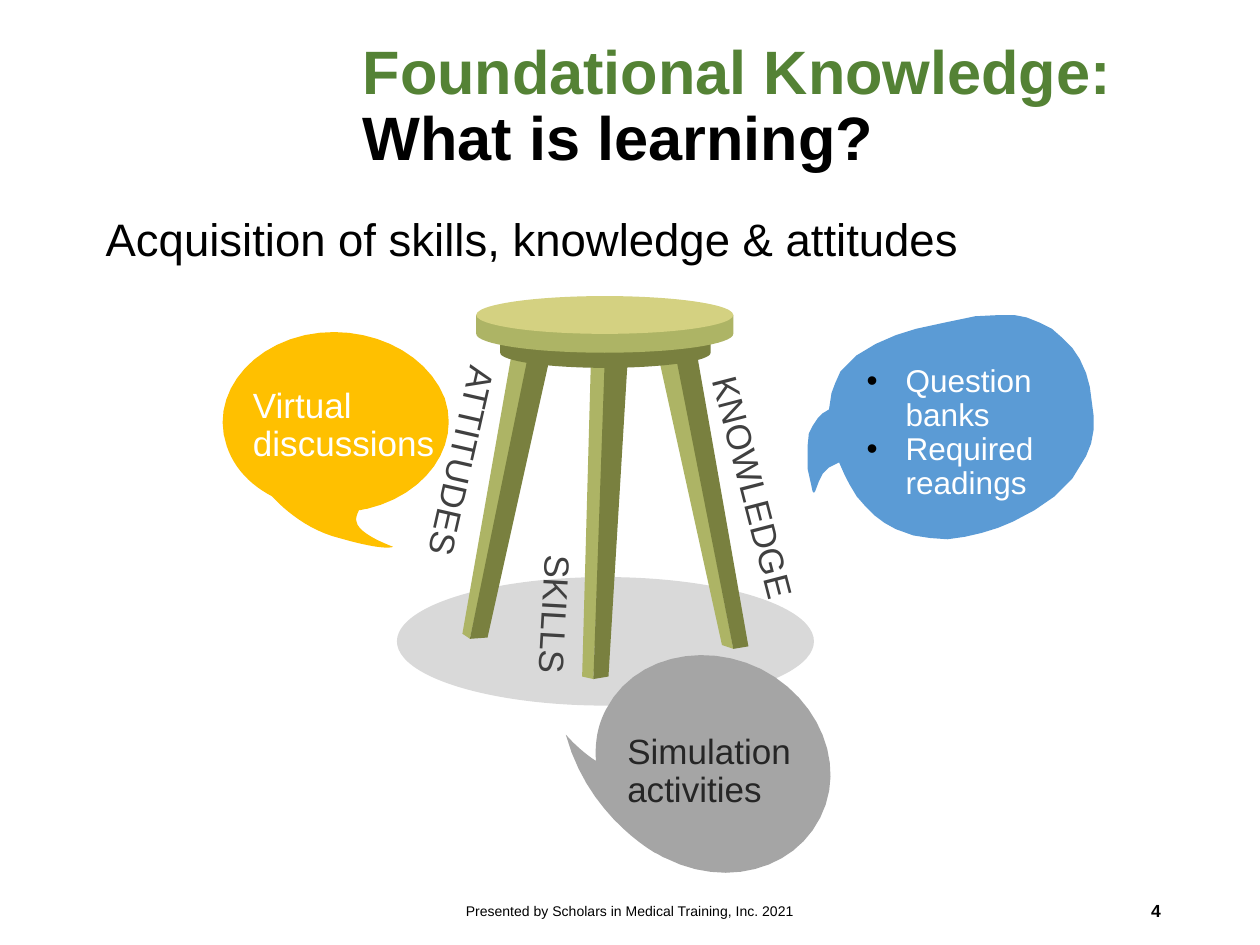
from math import cos, pi, sin

from lxml import etree
from pptx import Presentation
from pptx.dml.color import RGBColor
from pptx.enum.shapes import MSO_SHAPE
from pptx.enum.text import MSO_ANCHOR, PP_ALIGN
from pptx.oxml.ns import qn
from pptx.util import Inches, Pt

OVAL = MSO_SHAPE.OVAL
TOP, MIDDLE = MSO_ANCHOR.TOP, MSO_ANCHOR.MIDDLE
LEFT, CENTER, RIGHT = PP_ALIGN.LEFT, PP_ALIGN.CENTER, PP_ALIGN.RIGHT

COLUMNS = 100  # square cells: 100 columns by 75 rows
FONT = "Arial"
COLORS = {
    "black": "000000", "white": "FFFFFF", "heading": "548235",
    "label": "404040", "ink": "262626",
    "seat": "D4D181", "wood": "ADB465", "shade": "79803F",
    "gold": "FFC000", "gray": "A5A5A5", "blue": "5B9BD5",
}

# Each leg: corners of its lit face, then of its shaded face
LEGS = [
    ([(53.7, 28.1), (58.2, 51.5), (57.3, 51.2), (52.3, 28.5)],
     [(55.3, 28), (59.4, 51.3), (58.2, 51.5), (53.6, 28.1)]),
    ([(40.7, 27.6), (42.3, 27.8), (37.3, 50.7), (36.7, 50.3)],
     [(42, 27.8), (43.7, 28.1), (38.7, 50.6), (37.3, 50.7)]),
    ([(46.9, 28.6), (48.1, 28.6), (47.1, 53.9), (46.2, 53.7)],
     [(48, 28.6), (49.8, 28.9), (48.3, 53.7), (47.1, 53.9)]),
]

# Label, left, top, turn in degrees
LEG_LABELS = [
    ("KNOWLEDGE", 48.8, 38, 75.5),
    ("ATTITUDES", 24.7, 37.4, 102.8),
    ("SKILLS", 32.4, 52.5, 93.2),
]

# Curves: two control points and an end point for each piece
GRAY_START = (65.1, 64.9)
GRAY_CURVES = [
    ((63, 69.1), (57.5, 70.5), (52.8, 68.1)),
    ((52.5, 68), (52.3, 67.8), (52, 67.7)),
    ((51, 67.1), (46.5, 64.2), (44.9, 58.3)),
    ((44.9, 58.3), (45.9, 59.5), (47.3, 60.4)),
    ((47.2, 59), (47.4, 57.6), (48.1, 56.3)),
    ((50.2, 52.2), (55.7, 50.8), (60.4, 53.1)),
    ((65.1, 55.5), (67.2, 60.8), (65.1, 64.9)),
]
GOLD_START = (24.2, 26.6)
GOLD_CURVES = [
    ((19.4, 27.7), (16.7, 31.7), (18, 35.4)),
    ((18.6, 37.2), (19.9, 38.5), (21.6, 39.4)),
    ((22.6, 40.5), (24.5, 42.1), (26.9, 42.7)),
    ((30.7, 43.8), (31.2, 43.4), (31.2, 43.4)),
    ((31.2, 43.4), (28.4, 42.4), (28.3, 41.4)),
    ((28.2, 41.1), (28.4, 40.7), (28.5, 40.5)),
    ((28.7, 40.5), (28.9, 40.4), (29.1, 40.4)),
    ((33.8, 39.3), (36.6, 35.4), (35.3, 31.6)),
    ((33.8, 27.8), (28.9, 25.6), (24.2, 26.6)),
]
BLUE_OUTLINE = [
    (76.6, 42.6), (77.9, 42.3), (79.2, 41.9), (80.4, 41.4), (82.1, 40.5),
    (83.7, 39.4), (85.1, 38), (86.2, 36.2), (86.6, 35.2), (86.8, 34.1),
    (86.8, 33), (86.5, 30.7), (86.2, 29.6), (85.7, 28.5), (85.1, 27.6),
    (84.3, 26.8), (83.5, 26.1), (82.5, 25.6), (81.5, 25.2), (80.5, 25),
    (79.4, 25), (77.4, 25.1), (75, 25.6), (72.7, 26.1), (71.1, 26.6),
    (69.5, 27.3), (68, 28.2), (66.7, 29.5), (66.3, 30.4), (66, 31.2),
    (65.8, 32.5), (65.3, 32.8), (64.9, 33.2), (64.5, 33.8), (64.2, 34.4),
    (64.1, 35.4), (64.1, 37.2), (64.5, 39), (64.6, 39.1), (64.7, 39),
    (65, 38.2), (65.3, 37.6), (65.8, 37.1), (66.6, 36.7), (67, 37.6),
    (67.4, 38.4), (68, 39.4), (68.7, 40.2), (69.4, 40.9), (70.2, 41.5),
    (71.1, 42), (72.5, 42.5), (73.8, 42.7), (75.2, 42.8),
]


def curve_points(start, curves, steps=12):
    """Flatten cubic curves into a list of points."""
    points = [start]
    for first, second, end in curves:
        origin = points[-1]
        for step in range(1, steps + 1):
            t = step / steps
            u = 1 - t
            points.append(tuple(
                u**3 * a + 3 * u * u * t * b + 3 * u * t * t * c + t**3 * d
                for a, b, c, d in zip(origin, first, second, end)))
    return points


def drum_points(middle, radius, top, bottom, depth, steps=32):
    """Outline of a disc's side: flat top edge and a half-oval below."""
    arc = [(middle + radius * cos(pi * i / steps),
            bottom + depth * sin(pi * i / steps)) for i in range(steps + 1)]
    return [(middle - radius, top), (middle + radius, top)] + arc


def add_text(para, text, size=20, color="black", bold=False):
    span = para.add_run()
    span.text = text
    span.font.name = FONT
    span.font.size = Pt(size)
    span.font.bold = bold
    span.font.color.rgb = RGBColor.from_string(COLORS[color])


class StoolSlide:
    def __init__(self, deck):
        self.cell = deck.slide_width / COLUMNS
        self.shapes = deck.slides.add_slide(deck.slide_layouts[6]).shapes

    def cells(self, *lengths):
        return [round(length * self.cell) for length in lengths]

    def paint(self, shape, color, opacity=None):
        shape.shadow.inherit = False
        shape.fill.solid()
        shape.fill.fore_color.rgb = RGBColor.from_string(COLORS[color])
        shape.line.fill.background()
        if opacity is not None:
            tint = shape.fill._xPr.find(".//" + qn("a:srgbClr"))
            etree.SubElement(tint, qn("a:alpha"), val=str(opacity * 1000))

    def oval(self, place, color, opacity=None):
        self.paint(self.shapes.add_shape(OVAL, *self.cells(*place)), color, opacity)

    def outline(self, points, color):
        corners = [self.cells(*point) for point in points]
        builder = self.shapes.build_freeform(*corners[0], scale=1.0)
        builder.add_line_segments(corners[1:], close=True)
        self.paint(builder.convert_to_shape(), color)

    def text(self, place, paragraphs, align=LEFT, anchor=TOP, spacing=1.0,
             inset=0.5, indent=0, bullet=False, turn=0, **style):
        """Each paragraph is a list of lines; a line is (text, color)."""
        box = self.shapes.add_textbox(*self.cells(*place))
        box.rotation = turn
        frame = box.text_frame
        frame.word_wrap = True
        frame.vertical_anchor = anchor
        frame.margin_left, frame.margin_top = self.cells(1, inset)
        frame.margin_right, frame.margin_bottom = self.cells(1, inset)
        for number, lines in enumerate(paragraphs):
            para = frame.add_paragraph() if number else frame.paragraphs[0]
            para.alignment = align
            para.line_spacing = spacing
            self.indent(para, indent, bullet)
            for row, (text, color) in enumerate(lines):
                if row:
                    para.add_line_break()
                add_text(para, text, color=color, **style)

    def indent(self, para, indent, bullet):
        props = para._p.get_or_add_pPr()
        margin = self.cells(indent)[0]
        props.set("marL", str(margin))
        if bullet:
            props.set("indent", str(-margin))
            tint = etree.SubElement(props, qn("a:buClr"))
            etree.SubElement(tint, qn("a:srgbClr"), val=COLORS["black"])
            etree.SubElement(props, qn("a:buFont"), typeface=FONT)
            etree.SubElement(props, qn("a:buChar"), char="•")


def main():
    deck = Presentation()
    deck.slide_width, deck.slide_height = Inches(10), Inches(7.5)
    slide = StoolSlide(deck)

    slide.text((27.8, 1.7, 67.2, 13.7),
               [[("Foundational Knowledge:", "heading"), ("What is learning?", "black")]],
               anchor=MIDDLE, spacing=0.9, inset=1, size=35, bold=True)
    slide.text((6.7, 16.2, 86.2, 48.5),
               [[("Acquisition of skills, knowledge & attitudes", "black")]],
               spacing=0.9, inset=1, indent=0.7, size=26)

    slide.oval((31.5, 45.8, 33.1, 10.2), "black", opacity=15)
    for lit, shaded in LEGS:
        slide.outline(lit, "wood")
        slide.outline(shaded, "shade")
    slide.outline(drum_points(48.05, 8.35, 26.8, 28, 1.2), "shade")
    slide.outline(drum_points(48, 10.2, 25, 26.5, 1.5), "wood")
    slide.oval((37.8, 23.5, 20.4, 3), "seat")
    for label, left, top, turn in LEG_LABELS:
        slide.text((left, top, 23, 4.1), [[(label, "label")]], turn=turn)

    slide.outline(curve_points(GRAY_START, GRAY_CURVES), "gray")
    slide.outline(curve_points(GOLD_START, GOLD_CURVES), "gold")
    slide.outline(BLUE_OUTLINE, "blue")
    slide.text((67.8, 28.5, 20.2, 14),
               [[("Question banks", "white")], [("Required readings", "white")]],
               spacing=0.9, indent=3.1, bullet=True, size=18)
    slide.text((48.8, 57.8, 19.1, 7.1), [[("Simulation activities", "ink")]], spacing=0.9)
    slide.text((19.1, 30.3, 17, 7.1), [[("Virtual discussions", "white")]], spacing=0.9)

    slide.text((33.1, 70.3, 33.8, 4),
               [[("Presented by Scholars in Medical Training, Inc. 2021", "black")]],
               align=CENTER, anchor=MIDDLE, size=8)
    slide.text((70.6, 70.3, 22.5, 4), [[("4", "black")]],
               align=RIGHT, anchor=MIDDLE, size=10, bold=True)
    deck.save("out.pptx")


if __name__ == "__main__":
    main()
